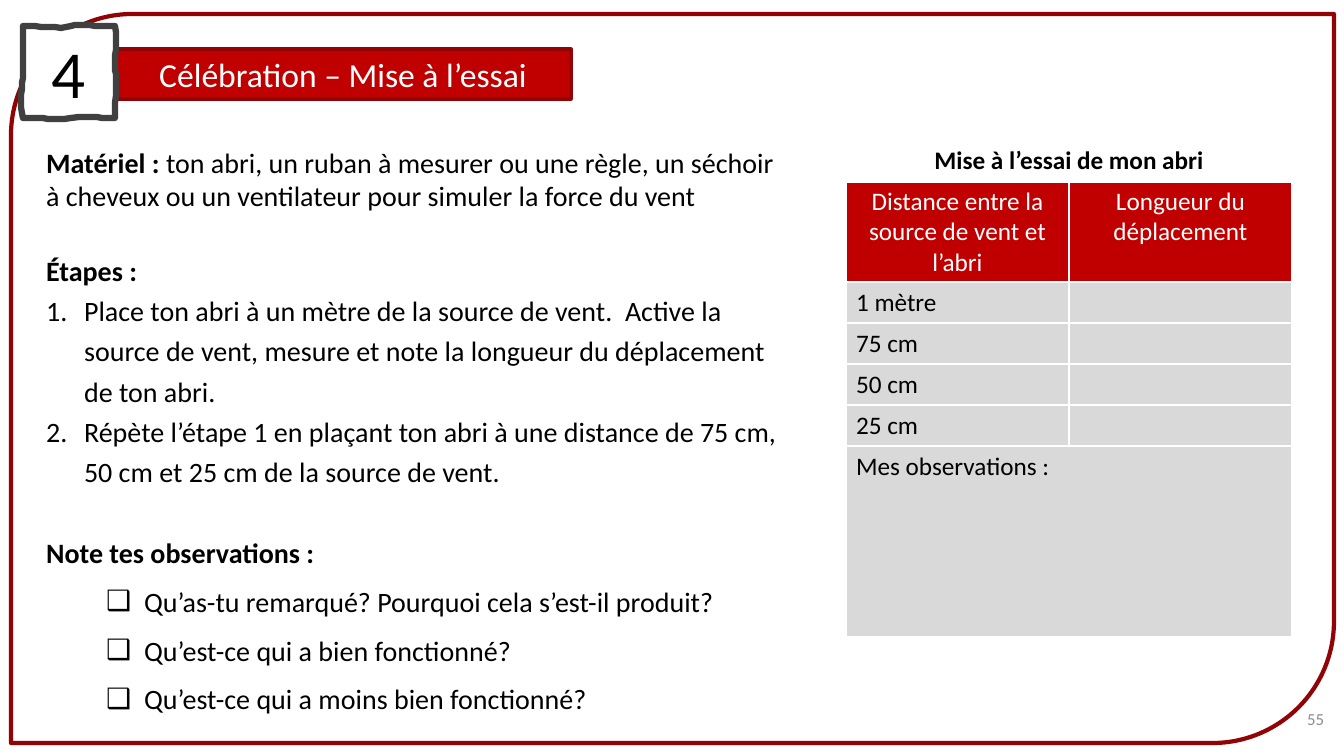
import pptx
import pptx.util
import pptx.dml.color
import pptx.enum.shapes
import pptx.enum.text
import pptx.oxml
import lxml.etree

PX = 9071
Pt = pptx.util.Pt
ALIGN = pptx.enum.text.PP_ALIGN
MID = pptx.enum.text.MSO_ANCHOR.MIDDLE
FIXED = pptx.enum.text.MSO_AUTO_SIZE.NONE
KIND = pptx.enum.shapes.MSO_SHAPE
NS = "http://schemas.openxmlformats.org/drawingml/2006/main"


def hue(code):
    return pptx.dml.color.RGBColor.from_string(code)


def style(para, size, code, align=ALIGN.LEFT, bold=False):
    para.alignment = align
    for run in para.runs:
        run.font.name = "Calibri"
        run.font.size = Pt(size)
        run.font.bold = bold
        run.font.color.rgb = hue(code)


deck = pptx.Presentation()
deck.slide_width = 1344 * PX
deck.slide_height = 756 * PX
slide = deck.slides.add_slide(deck.slide_layouts[1])
shapes = slide.shapes

frame = shapes.add_shape(KIND.ROUND_2_DIAG_RECTANGLE, 11 * PX, 14 * PX, 1323 * PX, 729 * PX)
frame.shadow.inherit = False
frame.fill.background()
frame.line.color.rgb = hue("920305")
frame.line.width = Pt(3)

title = shapes.title
title.left, title.top, title.width, title.height = 115 * PX, 49 * PX, 456 * PX, 50 * PX
title.fill.solid()
title.fill.fore_color.rgb = hue("C00000")
title.line.color.rgb = hue("920305")
title.line.width = Pt(2.25)
title.text_frame.text = "Célébration – Mise à l’essai"
title.text_frame.auto_size = FIXED
title.text_frame.vertical_anchor = MID
style(title.text_frame.paragraphs[0], 24, "FFFFFF", ALIGN.CENTER)

curves = [
    [(37, 25), (60, 30), (71, 26)],
    [(82, 22), (95, 28), (115, 26)],
    [(118, 41), (114, 60), (115, 70)],
    [(117, 80), (115, 97), (115, 118)],
    [(105, 119), (92, 115), (71, 118)],
    [(50, 122), (46, 116), (23, 118)],
    [(18, 106), (23, 84), (23, 74)],
    [(22, 64), (24, 36), (23, 26)],
]
start = (23, 26)
points = []
for one, two, end in curves:
    for step in range(1, 9):
        t = step / 8
        u = 1 - t
        points.append(tuple(
            u**3 * a + 3 * u * u * t * b + 3 * u * t * t * c + t**3 * d
            for a, b, c, d in zip(start, one, two, end)
        ))
    start = end
pen = shapes.build_freeform(23, 26, scale=PX)
pen.add_line_segments(points, close=True)
badge = pen.convert_to_shape()
badge.shadow.inherit = False
badge.fill.solid()
badge.fill.fore_color.rgb = hue("FFFFFF")
badge.line.color.rgb = hue("404040")
badge.line.width = Pt(4.5)
badge.text_frame.text = "4"
badge.text_frame.vertical_anchor = MID
style(badge.text_frame.paragraphs[0], 48, "000000", ALIGN.CENTER)

number = shapes.add_textbox(1256 * PX, 699 * PX, 81 * PX, 57 * PX).text_frame
number.word_wrap = True
number.margin_left = number.margin_right = 13 * PX
number.margin_top = number.margin_bottom = 13 * PX
number.text = "55"
style(number.paragraphs[0], 12, "8C8C8C", ALIGN.RIGHT)

NONE = ("buNone", {}, 0, 0)
STEP = ("buAutoNum", {"type": "arabicPeriod"}, 38, 0)
CHECK = ("buChar", {"char": "❑"}, 98, 1)
lines = [
    (NONE, 1, 0, "Matériel : ", "ton abri, un ruban à mesurer ou une règle, un séchoir à cheveux ou un ventilateur pour simuler la force du vent"),
    (NONE, 1.2, 24.4, "Étapes :", ""),
    (STEP, 1.2, 0, "", "Place ton abri à un mètre de la source de vent.  Active la source de vent, mesure et note la longueur du déplacement de ton abri."),
    (STEP, 1.2, 0, "", "Répète l’étape 1 en plaçant ton abri à une distance de 75 cm, 50 cm et 25 cm de la source de vent."),
    (NONE, 1.2, 29, "Note tes observations :", ""),
    (CHECK, 1.2, 6, "", "Qu’as-tu remarqué? Pourquoi cela s’est-il produit?"),
    (CHECK, 1.2, 6, "", "Qu’est-ce qui a bien fonctionné?"),
    (CHECK, 1.2, 6, "", "Qu’est-ce qui a moins bien fonctionné?"),
]
body = slide.placeholders[1]
body.left, body.top, body.width, body.height = 36 * PX, 140 * PX, 767 * PX, 583 * PX
text = body.text_frame
text.auto_size = FIXED
for index, (mark, space, before, head, rest) in enumerate(lines):
    para = text.paragraphs[0] if index == 0 else text.add_paragraph()
    tag, attrs, left, level = mark
    props = para._p.get_or_add_pPr()
    props.set("marL", str(left * PX))
    props.set("indent", str(-38 * PX if left else 0))
    lxml.etree.SubElement(props, f"{{{NS}}}{tag}", attrs)
    para.level = level
    para.line_spacing = space
    para.space_before = Pt(before)
    para.space_after = Pt(0)
    for part in filter(None, (head, rest)):
        para.add_run().text = part
    style(para, 20, "000000")
    if head:
        para.runs[0].font.bold = True

rows = [
    ("Mise à l’essai de mon abri", ""),
    ("Distance entre la source de vent et l’abri", "Longueur du déplacement"),
    ("1 mètre", ""),
    ("75 cm", ""),
    ("50 cm", ""),
    ("25 cm", ""),
    ("Mes observations :", ""),
]
highs = [41, 101, 41, 41, 41, 41, 191]
table = shapes.add_table(7, 2, 846 * PX, 140 * PX, 446 * PX, sum(highs) * PX).table
table.first_row = False
table.horz_banding = False
for column in table.columns:
    column.width = 223 * PX
for row, (words, high) in enumerate(zip(rows, highs)):
    table.rows[row].height = high * PX
    paint = {0: "FFFFFF", 1: "C00000"}.get(row, "D9D9D9")
    ink = "FFFFFF" if row == 1 else "000000"
    align = ALIGN.CENTER if row < 2 else ALIGN.LEFT
    for col, word in enumerate(words):
        cell = table.cell(row, col)
        cell.text = word
        cell.fill.solid()
        cell.fill.fore_color.rgb = hue(paint)
        style(cell.text_frame.paragraphs[0], 18, ink, align, row == 0)
        props = cell._tc.get_or_add_tcPr()
        for place, side in enumerate("LRTB"):
            width = Pt(3 if row == 0 and side == "B" else 1)
            edge = pptx.oxml.parse_xml(
                f'<a:ln{side} xmlns:a="{NS}" w="{width}"><a:solidFill>'
                f'<a:srgbClr val="FFFFFF"/></a:solidFill></a:ln{side}>'
            )
            props.insert(place, edge)
for row in (0, 6):
    table.cell(row, 0).merge(table.cell(row, 1))

deck.save("out.pptx")
